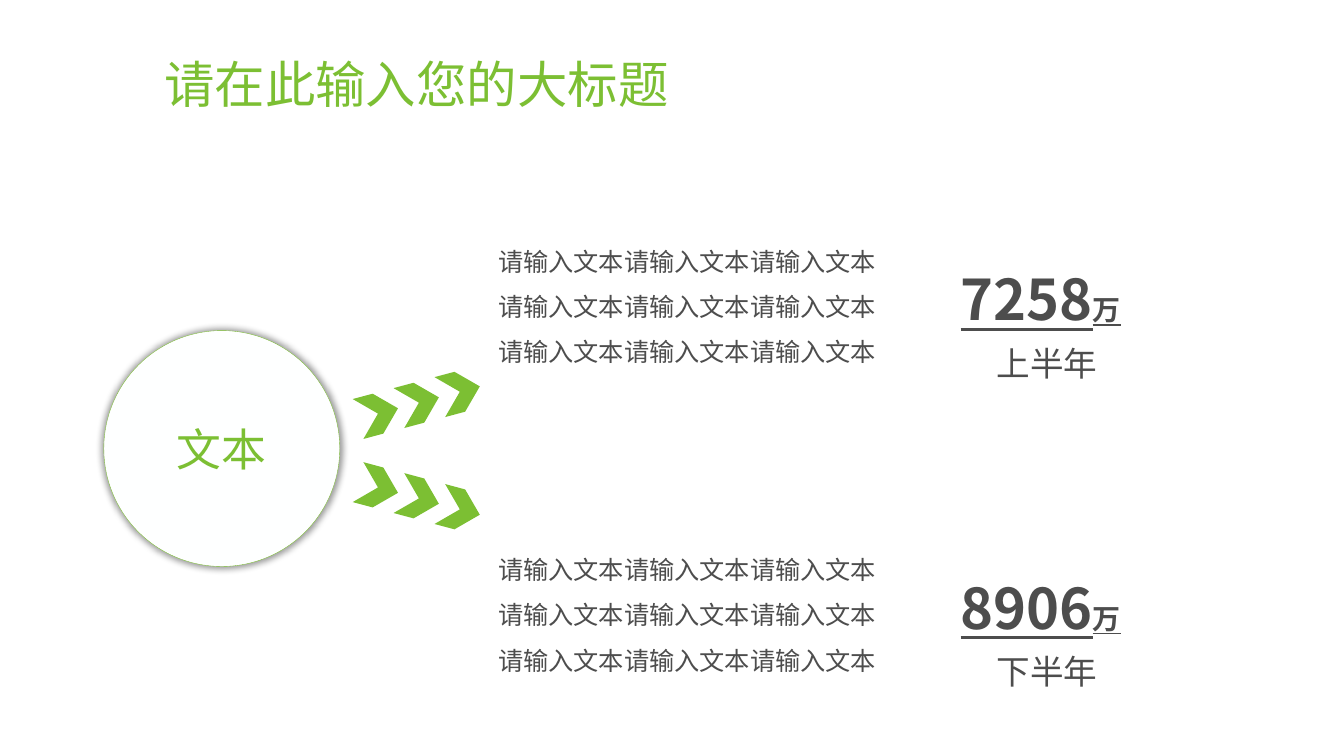
from dataclasses import dataclass

from lxml.etree import SubElement
from pptx import Presentation
from pptx.dml.color import RGBColor
from pptx.enum.shapes import MSO_SHAPE
from pptx.enum.text import MSO_ANCHOR, MSO_AUTO_SIZE, PP_ALIGN
from pptx.oxml.ns import qn
from pptx.shapes.base import BaseShape
from pptx.slide import Slide
from pptx.text.text import _Run as Run
from pptx.util import Emu, Pt

PX = 9144  # 100 px to the inch
COLORS = {"green": "7CBF33", "grey": "4D4D4D", "white": "FEFFFF", "black": "000000"}
CJK_FONT = "Noto Sans CJK SC"
HALF_YEAR_STEP = 306
CHEVRON_COUNT, CHEVRON_STEP = 3, 42
CHEVRON_WIDTH, CHEVRON_HEIGHT = 41, 41


@dataclass(frozen=True)
class HalfYear:
    amount: str
    caption: str
    arrow_top: int
    arrow_rotation: int


HALF_YEARS = [
    HalfYear("7258", "上半年", 379, 345),
    HalfYear("8906", "下半年", 474, 15),
]


def px(length: int) -> Emu:
    return Emu(length * PX)


def color(name: str) -> RGBColor:
    return RGBColor.from_string(COLORS[name])


def format_run(span: Run, size: int, color_name: str, font: str = CJK_FONT) -> None:
    span.font.size = Pt(size)
    span.font.name = font
    span.font.color.rgb = color(color_name)
    SubElement(span.font._element, qn("a:ea"), typeface=CJK_FONT)


def place(shape: BaseShape, left: int, top: int, width: int, height: int) -> None:
    shape.left, shape.top = px(left), px(top)
    shape.width, shape.height = px(width), px(height)


def add_text(slide: Slide, left: int, top: int, width: int, height: int,
             text: str, size: int, font: str = CJK_FONT) -> BaseShape:
    box = slide.shapes.add_textbox(px(left), px(top), px(width), px(height))
    frame = box.text_frame
    frame.word_wrap = True
    frame.text = text
    frame.paragraphs[0].alignment = PP_ALIGN.CENTER
    format_run(frame.paragraphs[0].runs[0], size, "grey", font)
    return box


def add_title(slide: Slide) -> None:
    title = slide.shapes.title
    place(title, 153, 40, 1060, 93)
    frame = title.text_frame
    frame.text = "请在此输入您的大标题"
    frame.auto_size = MSO_AUTO_SIZE.NONE
    frame.vertical_anchor = MSO_ANCHOR.MIDDLE
    para = frame.paragraphs[0]
    para.alignment = PP_ALIGN.LEFT
    para.line_spacing = 0.9
    format_run(para.runs[0], 36, "green")


def add_chevrons(slide: Slide, half: HalfYear) -> None:
    """Draw a row of chevrons as one tilted outline."""
    middle, notch = CHEVRON_HEIGHT / 2, CHEVRON_WIDTH / 2
    outline = [(0, 0), (notch, 0), (CHEVRON_WIDTH, middle),
               (notch, CHEVRON_HEIGHT), (0, CHEVRON_HEIGHT), (notch, middle)]
    builder = slide.shapes.build_freeform(0, 0, scale=1.0)
    for index in range(CHEVRON_COUNT):
        points = [((x + index * CHEVRON_STEP) * PX, y * PX) for x, y in outline]
        if index:
            builder.move_to(*points[0])
        builder.add_line_segments(points[1:], close=True)
    arrow = builder.convert_to_shape(px(353), px(half.arrow_top))
    arrow.rotation = half.arrow_rotation
    arrow.shadow.inherit = False
    arrow.fill.solid()
    arrow.fill.fore_color.rgb = color("green")
    arrow.line.fill.background()


def add_circle(slide: Slide) -> None:
    circle = slide.shapes.add_shape(MSO_SHAPE.OVAL, px(103), px(328), px(234), px(234))
    circle.fill.solid()
    circle.fill.fore_color.rgb = color("white")
    circle.line.color.rgb = color("green")
    circle.line.width = Pt(0.25)
    circle.shadow.inherit = False
    effects = circle._element.spPr.find(qn("a:effectLst"))
    shadow = SubElement(effects, qn("a:outerShdw"), blurRad=str(Pt(5)), dist="0",
                        dir="0", sx="102000", sy="102000", algn="ctr", rotWithShape="0")
    shade = SubElement(shadow, qn("a:srgbClr"), val=COLORS["black"])
    SubElement(shade, qn("a:alpha"), val="40000")
    frame = circle.text_frame
    frame.text = "文本"
    frame.vertical_anchor = MSO_ANCHOR.MIDDLE
    frame.paragraphs[0].alignment = PP_ALIGN.CENTER
    format_run(frame.paragraphs[0].runs[0], 32, "green")


def add_half_year(slide: Slide, half: HalfYear, offset: int) -> None:
    details = add_text(slide, 481, 203 + offset, 401, 188, "请输入文本" * 9, 18)
    details.text_frame.margin_top = px(26)
    details.text_frame.paragraphs[0].line_spacing = 1.5

    amount = add_text(slide, 943, 258 + offset, 233, 77, half.amount, 40)
    amount.text_frame.auto_size = MSO_AUTO_SIZE.SHAPE_TO_FIT_TEXT
    para = amount.text_frame.paragraphs[0]
    para.alignment = PP_ALIGN.LEFT
    unit = para.add_run()
    unit.text = "万"
    format_run(unit, 20, "grey")
    for span in para.runs:
        span.font.bold = True
        span.font.underline = True

    caption = add_text(slide, 967, 335 + offset, 143, 50, half.caption, 24, "Calibri")
    caption.text_frame.auto_size = MSO_AUTO_SIZE.SHAPE_TO_FIT_TEXT


def main() -> None:
    deck = Presentation()
    deck.slide_width, deck.slide_height = px(1333), px(750)
    slide = deck.slides.add_slide(deck.slide_layouts[5])
    add_title(slide)
    for half in HALF_YEARS:
        add_chevrons(slide, half)
    add_circle(slide)
    for index, half in enumerate(HALF_YEARS):
        add_half_year(slide, half, index * HALF_YEAR_STEP)
    deck.save("out.pptx")


if __name__ == "__main__":
    main()
